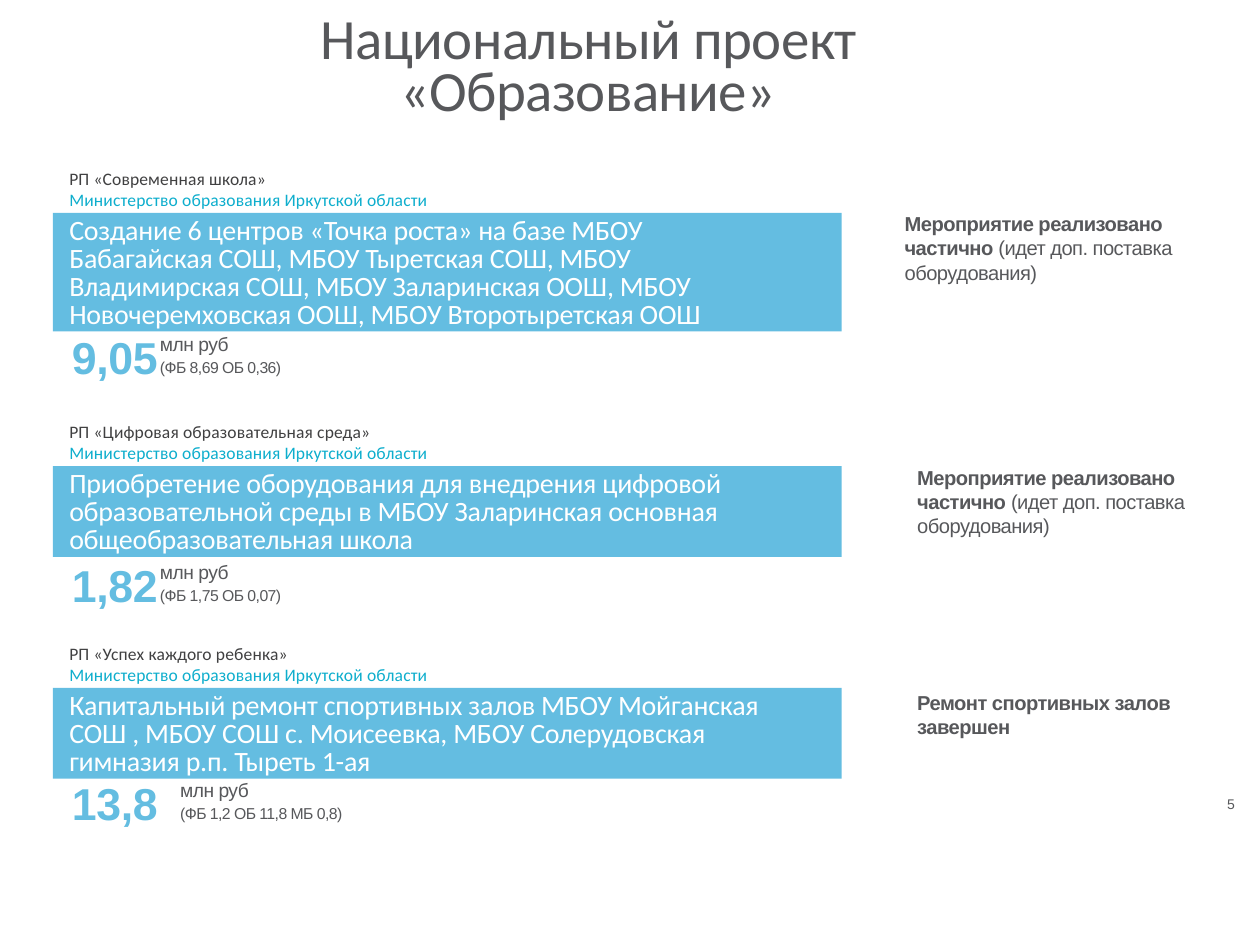
from pptx import Presentation
from pptx.dml.color import RGBColor
from pptx.enum import shapes, text
from pptx.util import Inches, Pt

GREY, DARK, BLUE, TEAL, WHITE = "57585B", "404041", "64BDE1", "0EAECD", "FFFFFF"

# Each format: font values, letter spacing and colour
TITLE = dict(name="Calibri", size=Pt(32.5), spacing=-0.3, color=GREY)
PROGRAM = dict(name="Calibri", size=Pt(10), spacing=0.1, color=DARK)
MINISTRY = {**PROGRAM, "color": TEAL}
BANNER = dict(name="Calibri", size=Pt(16), spacing=-0.1, color=WHITE)
AMOUNT = dict(name="Arial", size=Pt(25.5), bold=True, spacing=-0.2, color=BLUE)
UNIT = dict(name="Arial", size=Pt(11), spacing=-0.3, color=GREY)
SOURCES = {**UNIT, "size": Pt(9)}
NOTE = {**UNIT, "size": Pt(11.5)}
RESULT = {**NOTE, "bold": True}
NUMBER = {**UNIT, "size": Pt(8)}


def rgb(value):
    return RGBColor.from_string(value)


class Page:
    def __init__(self, deck):
        self.slide = deck.slides.add_slide(deck.slide_layouts[6])

    def fill_text(self, box, paras, insets, para_format):
        """Each paragraph is a list of (words, format) spans."""
        frame = box.text_frame
        frame.word_wrap = True
        sides = ("left", "top", "right", "bottom")
        for side, inset in zip(sides, insets):
            setattr(frame, f"margin_{side}", Inches(inset))
        for index, spans in enumerate(paras):
            para = frame.add_paragraph() if index else frame.paragraphs[0]
            for key, value in para_format.items():
                if index or key != "space_before":
                    setattr(para, key, value)
            for words, style in spans:
                span = para.add_run()
                span.text = words
                for key, value in style.items():
                    if key == "color":
                        span.font.color.rgb = rgb(value)
                    elif key == "spacing":
                        span._r.get_or_add_rPr().set("spc", str(round(value * 100)))
                    else:
                        setattr(span.font, key, value)

    def text(self, place, paras, top_inset=0.02, anchor=text.MSO_ANCHOR.TOP, **para_format):
        box = self.slide.shapes.add_textbox(*map(Inches, place))
        box.text_frame.vertical_anchor = anchor
        self.fill_text(box, paras, (0.01, top_inset, 0, 0), para_format)

    def banner(self, place, words):
        box = self.slide.shapes.add_shape(shapes.MSO_SHAPE.RECTANGLE, *map(Inches, place))
        box.shadow.inherit = False
        box.fill.solid()
        box.fill.fore_color.rgb = rgb(BLUE)
        box.line.fill.background()
        box.text_frame.vertical_anchor = text.MSO_ANCHOR.TOP
        self.fill_text(box, [[(words, BANNER)]], (0.13, 0.04, 0.5, 0),
                       dict(alignment=text.PP_ALIGN.LEFT, line_spacing=Pt(16)))

    def project(self, top, height, program, task, amount, amount_top,
                sources, sources_left, result, result_place):
        self.text((0.54, top - 0.37, 3.38, 0.35),
                  [[(program, PROGRAM)],
                   [("Министерство образования Иркутской области", MINISTRY)]],
                  top_inset=0.01)
        self.banner((0.42, top, 6.26, height), task)
        self.text((0.56, amount_top, 1.09, 0.45), [[(amount, AMOUNT)]])
        self.text((sources_left, amount_top + 0.02, 2.47, 0.37),
                  [[("млн руб", UNIT)], [(sources, SOURCES)]], space_before=Pt(1.2))
        self.text((*result_place, 2.57, 0.61), [result])


def main():
    deck = Presentation()
    deck.slide_width, deck.slide_height = Inches(10), Inches(7.5)
    page = Page(deck)

    # Title
    page.text((1.79, 0.13, 5.75, 0.85), [[("Национальный проект «Образование»", TITLE)]],
              top_inset=0.01, anchor=text.MSO_ANCHOR.MIDDLE,
              alignment=text.PP_ALIGN.CENTER, line_spacing=Pt(30))

    # Regional projects
    partial = [("Мероприятие реализовано частично ", RESULT),
               ("(идет доп. поставка оборудования)", NOTE)]
    finished = [("Ремонт спортивных залов завершен", RESULT)]
    page.project(1.69, 0.94, "РП «Современная школа»",
                 "Создание 6 центров «Точка роста» на базе МБОУ Бабагайская СОШ, "
                 "МБОУ Тыретская СОШ, МБОУ Владимирская СОШ, МБОУ Заларинская ООШ, "
                 "МБОУ Новочеремховская ООШ, МБОУ Второтыретская ООШ",
                 "9,05", 2.6, "(ФБ 8,69 ОБ 0,36)", 1.26, partial, (7.17, 1.66))
    page.project(3.7, 0.72, "РП «Цифровая образовательная среда»",
                 "Приобретение оборудования для внедрения цифровой образовательной "
                 "среды в МБОУ Заларинская основная общеобразовательная школа",
                 "1,82", 4.41, "(ФБ 1,75 ОБ 0,07)", 1.26, partial, (7.27, 3.67))
    page.project(5.46, 0.72, "РП «Успех каждого ребенка»",
                 "Капитальный ремонт спортивных залов МБОУ Мойганская СОШ , "
                 "МБОУ СОШ с. Моисеевка, МБОУ Солерудовская гимназия р.п. Тыреть 1-ая",
                 "13,8", 6.14, "(ФБ 1,2 ОБ 11,8 МБ 0,8)", 1.42, finished, (7.27, 5.46))

    # Page number
    page.text((9.73, 6.29, 0.21, 0.15), [[("5", NUMBER)]])

    deck.save("out.pptx")


if __name__ == "__main__":
    main()
